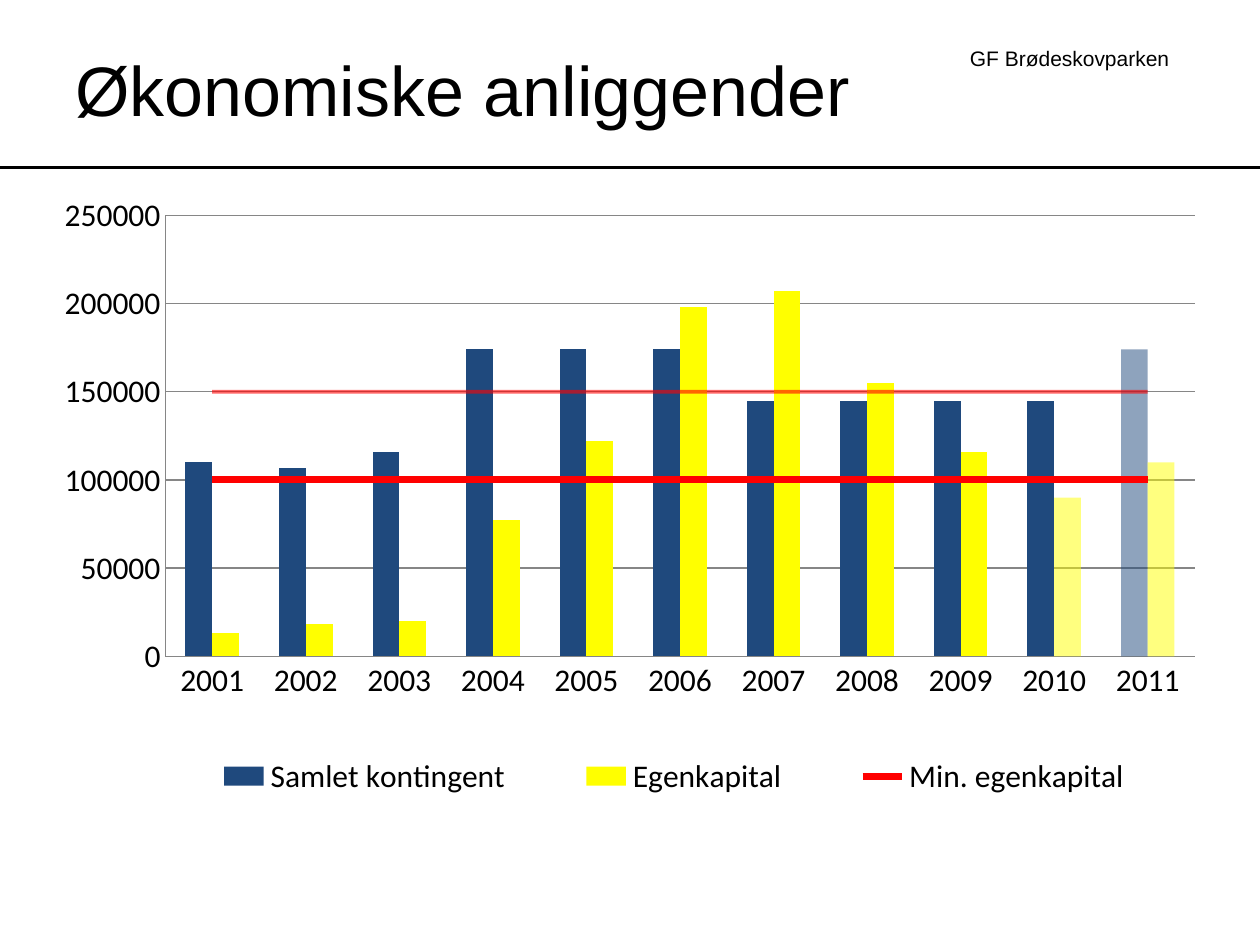
from lxml import etree
from pptx import Presentation
from pptx.chart.data import CategoryChartData
from pptx.dml.color import RGBColor
from pptx.enum.chart import (XL_CHART_TYPE, XL_LEGEND_POSITION,
                             XL_MARKER_STYLE, XL_TICK_MARK)
from pptx.enum.shapes import MSO_CONNECTOR
from pptx.enum.text import MSO_ANCHOR, PP_ALIGN
from pptx.oxml import parse_xml
from pptx.oxml.ns import nsdecls, qn
from pptx.util import Inches, Pt

COLUMNS = XL_CHART_TYPE.COLUMN_CLUSTERED
BOTTOM = XL_LEGEND_POSITION.BOTTOM
NO_MARKER = XL_MARKER_STYLE.NONE
NO_TICK = XL_TICK_MARK.NONE
STRAIGHT = MSO_CONNECTOR.STRAIGHT
MIDDLE, TOP = MSO_ANCHOR.MIDDLE, MSO_ANCHOR.TOP
LEFT, RIGHT = PP_ALIGN.LEFT, PP_ALIGN.RIGHT

BLACK = RGBColor(0x00, 0x00, 0x00)
GRAY = RGBColor(0x86, 0x86, 0x86)
BLUE = RGBColor(0x1F, 0x49, 0x7D)
YELLOW = RGBColor(0xFF, 0xFF, 0x00)
RED = RGBColor(0xFF, 0x00, 0x00)


def write(shape, text, size, align=LEFT, anchor=TOP):
    tf = shape.text_frame
    tf.word_wrap = True
    tf.vertical_anchor = anchor
    p = tf.paragraphs[0]
    p.alignment = align
    r = p.add_run()
    r.text = text
    r.font.name, r.font.size = "Arial", Pt(size)
    r.font.color.rgb = BLACK


def layout_xml(x, y, w, h, target=""):
    return parse_xml(
        f'<c:layout {nsdecls("c")}><c:manualLayout>{target}'
        '<c:xMode val="edge"/><c:yMode val="edge"/>'
        f'<c:x val="{x}"/><c:y val="{y}"/><c:w val="{w}"/><c:h val="{h}"/>'
        '</c:manualLayout></c:layout>')


prs = Presentation()
prs.slide_width, prs.slide_height = Inches(10), Inches(7.5)
s = prs.slides.add_slide(prs.slide_layouts[5])

# Header: association name, rule and title
name = s.shapes.add_textbox(Inches(7.58), Inches(0.31), Inches(1.8), Inches(0.3))
write(name, "GF Brødeskovparken", 12, align=RIGHT)

rule = s.shapes.add_connector(STRAIGHT, 0, Inches(1.33), Inches(10), Inches(1.33))
rule.line.color.rgb, rule.line.width = BLACK, Pt(1.5)
etree.SubElement(rule._element.spPr, qn("a:effectLst"))

title = s.shapes.title
title.left, title.top = Inches(0.5), Inches(0.23)
title.width, title.height = Inches(7), Inches(0.94)
write(title, "Økonomiske anliggender", 40, anchor=MIDDLE)

# Chart data
data = CategoryChartData()
data.categories = [str(year) for year in range(2001, 2012)]
data.add_series("Samlet kontingent", [110000, 107000, 116000] + [174000] * 3
                + [145000] * 4 + [174000])
data.add_series("Egenkapital", [13000, 18000, 20000, 77000, 122000, 198000,
                                207000, 155000, 116000, 90000, 110000])
data.add_series("Min. egenkapital", [100000] * 11)
data.add_series("Series 4", [150000] * 11)
chart = s.shapes.add_chart(COLUMNS, Inches(0.16), Inches(1.41), Inches(9.61),
                           Inches(5), data).chart
chart.has_title = False
chart.font.name, chart.font.size = "Calibri", Pt(18)
chart.font.color.rgb = BLACK

# The last two series become lines on the same axes
bar_xml = chart.plots[0]._element
line_xml = parse_xml(f'<c:lineChart {nsdecls("c")}><c:grouping val="standard"/>'
                     '<c:varyColors val="0"/></c:lineChart>')
for ser in bar_xml.findall(qn("c:ser"))[2:]:
    for invert in ser.findall(qn("c:invertIfNegative")):
        ser.remove(invert)
    line_xml.append(ser)
etree.SubElement(line_xml, qn("c:marker")).set("val", "1")
for axis_id in bar_xml.findall(qn("c:axId")):
    etree.SubElement(line_xml, qn("c:axId")).set("val", axis_id.get("val"))
bar_xml.addnext(line_xml)
bars, lines = chart.plots

# Columns, with the budgeted years half transparent
bars.gap_width, bars.overlap = 150, 0
bars.vary_by_categories = False
for series, color, budget in zip(bars.series, (BLUE, YELLOW), ([10], [9, 10])):
    series.invert_if_negative = False
    series.format.fill.solid()
    series.format.fill.fore_color.rgb = color
    for i in budget:
        fill = series.points[i].format.fill
        fill.solid()
        fill.fore_color.rgb = color
    for point_xml in series._element.findall(qn("c:dPt")):
        for clr in point_xml.iter(qn("a:srgbClr")):
            etree.SubElement(clr, qn("a:alpha")).set("val", "50000")

# Threshold lines
for series, width in zip(lines.series, (4, 2)):
    series.smooth = False
    series.marker.style = NO_MARKER
    series.format.line.color.rgb, series.format.line.width = RED, Pt(width)
for clr in lines.series[1]._element.iter(qn("a:srgbClr")):
    etree.SubElement(clr, qn("a:alpha")).set("val", "60000")

# Axes
value_axis = chart.value_axis
value_axis.minimum_scale, value_axis.maximum_scale = 0, 250000
value_axis.major_unit = 50000
value_axis.has_major_gridlines = True
value_axis.tick_labels.number_format = "General"
value_axis.tick_labels.number_format_is_linked = False
for axis in (chart.category_axis, value_axis):
    axis.major_tick_mark = axis.minor_tick_mark = NO_TICK
for part in (chart.category_axis, value_axis, value_axis.major_gridlines):
    part.format.line.color.rgb, part.format.line.width = GRAY, Pt(0.75)

# Legend without the upper threshold
chart.has_legend = True
legend = chart.legend
legend.position = BOTTOM
legend.include_in_layout = False
legend_xml = legend._element
plot_xml = bar_xml.getparent()
for parent in (legend_xml, plot_xml):
    for old in parent.findall(qn("c:layout")):
        parent.remove(old)
# The default position is written out so that the parts can follow it in order
legend_pos = legend_xml.find(qn("c:legendPos"))
legend_pos.addnext(layout_xml(0.11, 0.9, 0.86, 0.1))
legend_pos.addnext(parse_xml(f'<c:legendEntry {nsdecls("c")}><c:idx val="3"/>'
                             '<c:delete val="1"/></c:legendEntry>'))

# Plot area
plot_xml.insert(0, layout_xml(0.12, 0.06, 0.85, 0.7,
                              '<c:layoutTarget val="inner"/>'))

prs.save("out.pptx")
